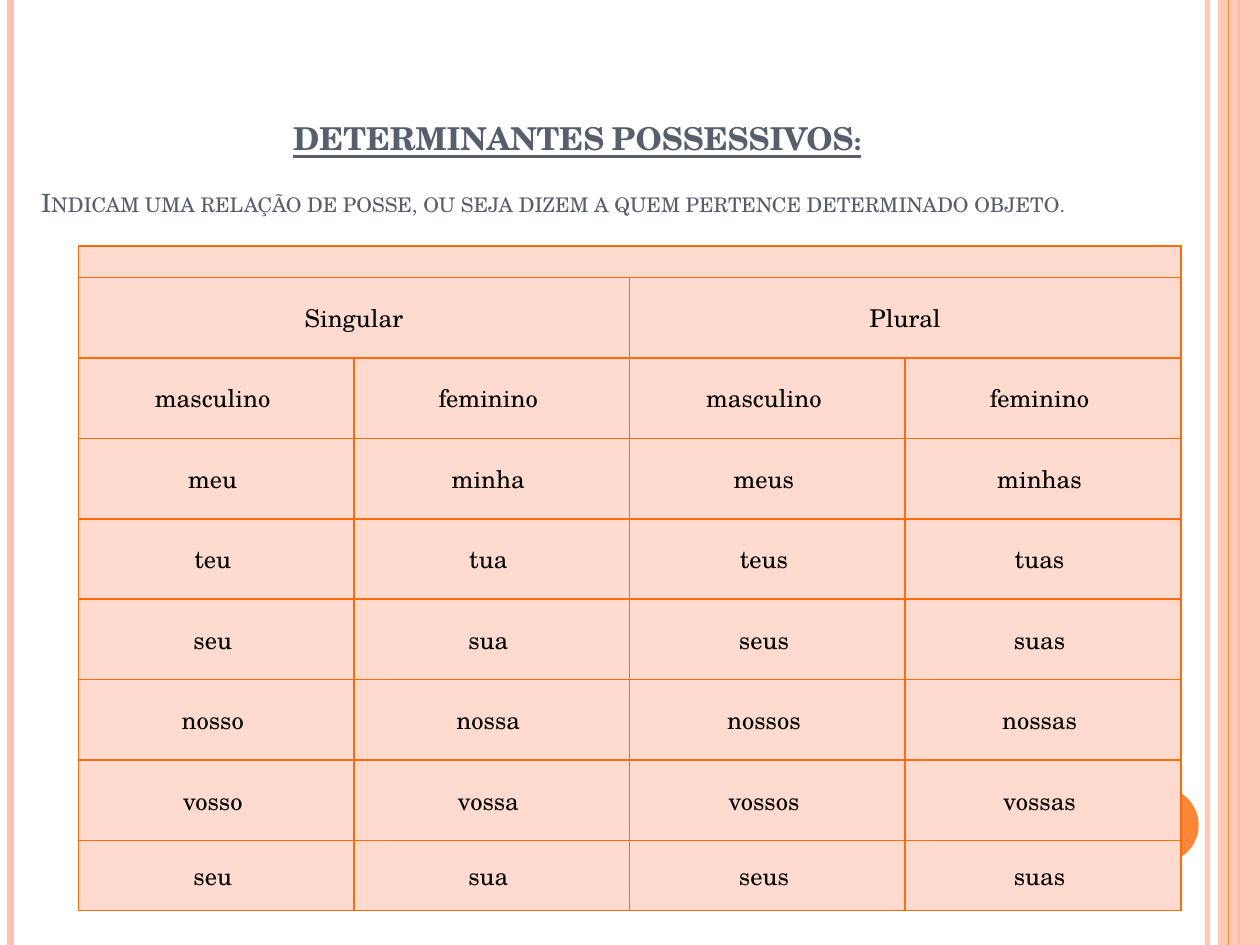
from pptx import Presentation
from pptx.dml.color import RGBColor
from pptx.enum.shapes import MSO_CONNECTOR as Connector, MSO_SHAPE as Shape
from pptx.enum.text import MSO_ANCHOR as Anchor, PP_ALIGN as Align
from pptx.oxml import parse_xml
from pptx.oxml.ns import nsdecls, qn
from pptx.util import Pt
from lxml.etree import SubElement

FONT = "TeX Gyre Schola"
PEACH = RGBColor(0xFE, 0xC3, 0xAE)
ORANGE = RGBColor(0xFE, 0x86, 0x37)
BORDER = RGBColor(0xFF, 0x6B, 0x0A)
CELL = RGBColor(0xFF, 0xDA, 0xCF)
SLATE = RGBColor(0x57, 0x5F, 0x6D)
BLACK = RGBColor(0, 0, 0)

HEADING = "DETERMINANTES POSSESSIVOS:"
DEFINITION = ("Indicam uma relação de posse, ou seja dizem a quem pertence "
              "determinado objeto.")
NUMBERS = ["Singular", "Plural"]
FORMS = [
    ["masculino", "feminino"] * 2,
    ["meu", "minha", "meus", "minhas"],
    ["teu", "tua", "teus", "tuas"],
    ["seu", "sua", "seus", "suas"],
    ["nosso", "nossa", "nossos", "nossas"],
    ["vosso", "vossa", "vossos", "vossas"],
    ["seu", "sua", "seus", "suas"],
]
ROW_HEIGHTS = [18] + [46] * 7 + [40]


def set_opacity(properties, percent):
    color = next(properties.iter(qn("a:srgbClr")))
    SubElement(color, qn("a:alpha"), val=str(percent * 1000))


def format_run(run, size, color):
    run.font.name = FONT
    run.font.size = Pt(size)
    run.font.color.rgb = color


def add_stripe(slide, x, height, color, width, opacity=100):
    line = slide.shapes.add_connector(
        Connector.STRAIGHT, Pt(x), Pt(0), Pt(x), Pt(height))
    line.line.color.rgb = color
    line.line.width = Pt(width)
    properties = line._element.spPr
    SubElement(properties, qn("a:effectLst"))
    if opacity < 100:
        set_opacity(properties, opacity)


def add_solid(slide, kind, left, top, width, height, color):
    shape = slide.shapes.add_shape(
        kind, Pt(left), Pt(top), Pt(width), Pt(height))
    shape.shadow.inherit = False
    shape.fill.solid()
    shape.fill.fore_color.rgb = color
    shape.line.fill.background()
    return shape


def add_frame(slide, width, height):
    # Side stripes, right band and corner disc
    add_stripe(slide, width - 30, height, PEACH, 3, 93)
    add_stripe(slide, 6, height, PEACH, 4.5)
    add_stripe(slide, width - 12, height, ORANGE, 1.5)
    band = add_solid(slide, Shape.RECTANGLE, width - 24, 0, 24, height, PEACH)
    set_opacity(band._element.spPr, 87)
    add_stripe(slide, width - 18, height, ORANGE, 0.75)
    add_solid(slide, Shape.OVAL, width - 78, height - 90, 43, 43, ORANGE)


def add_title(slide, left, top, width, height):
    box = slide.shapes.add_textbox(Pt(left), Pt(top), Pt(width), Pt(height))
    frame = box.text_frame
    frame.word_wrap = True
    frame.vertical_anchor = Anchor.BOTTOM
    frame.margin_bottom = Pt(21)
    heading, definition = frame.paragraphs[0], frame.add_paragraph()
    heading.text, definition.text = HEADING, DEFINITION
    definition.space_before = Pt(17.5)
    heading._p.get_or_add_pPr().set("marL", str(Pt(144)))
    for paragraph, size in ((heading, 18), (definition, 14.4)):
        run = paragraph.runs[0]
        format_run(run, size, SLATE)
        run._r.get_or_add_rPr().set("cap", "small")
    heading.runs[0].font.bold = True
    heading.runs[0].font.underline = True


def style_cell(cell):
    cell.margin_left = cell.margin_right = Pt(0.7)
    cell.margin_top = cell.margin_bottom = Pt(0.7)
    cell.vertical_anchor = Anchor.MIDDLE
    properties = cell._tc.get_or_add_tcPr()
    for side in ("lnL", "lnR", "lnT", "lnB"):
        properties.append(parse_xml(
            f'<a:{side} {nsdecls("a")} w="{Pt(1)}"><a:solidFill>'
            f'<a:srgbClr val="{BORDER}"/></a:solidFill></a:{side}>'))
    cell.fill.solid()
    cell.fill.fore_color.rgb = CELL


def write_cell(cell, text):
    paragraph = cell.text_frame.paragraphs[0]
    paragraph.text = text
    paragraph.alignment = Align.CENTER
    format_run(paragraph.runs[0], 14, BLACK)


def add_possessives(slide, left, top, width, height):
    table = slide.shapes.add_table(
        len(ROW_HEIGHTS), 4, Pt(left), Pt(top), Pt(width), Pt(height)).table
    for column in table.columns:
        column.width = Pt(width / 4)
    for row, row_height in zip(table.rows, ROW_HEIGHTS):
        row.height = Pt(row_height)
    for cell in table.iter_cells():
        style_cell(cell)

    # Empty top band, kept low by a small text size
    table.cell(0, 0).merge(table.cell(0, 3))
    for column in range(4):
        paragraph = table.cell(0, column).text_frame.paragraphs[0]
        SubElement(paragraph._p, qn("a:endParaRPr"), sz="1000")

    # Number headings, each over two genders
    for index, number in enumerate(NUMBERS):
        first = table.cell(1, 2 * index)
        first.merge(table.cell(1, 2 * index + 1))
        write_cell(first, number)

    for row, forms in enumerate(FORMS, start=2):
        for column, form in enumerate(forms):
            write_cell(table.cell(row, column), form + " ")


def main():
    presentation = Presentation()
    presentation.slide_width, presentation.slide_height = Pt(720), Pt(540)
    slide = presentation.slides.add_slide(presentation.slide_layouts[6])
    add_frame(slide, 720, 540)
    add_title(slide, 16.5, 55.5, 667.5, 90)
    add_possessives(slide, 44.75, 140.5, 630, sum(ROW_HEIGHTS))
    presentation.save("out.pptx")


if __name__ == "__main__":
    main()
